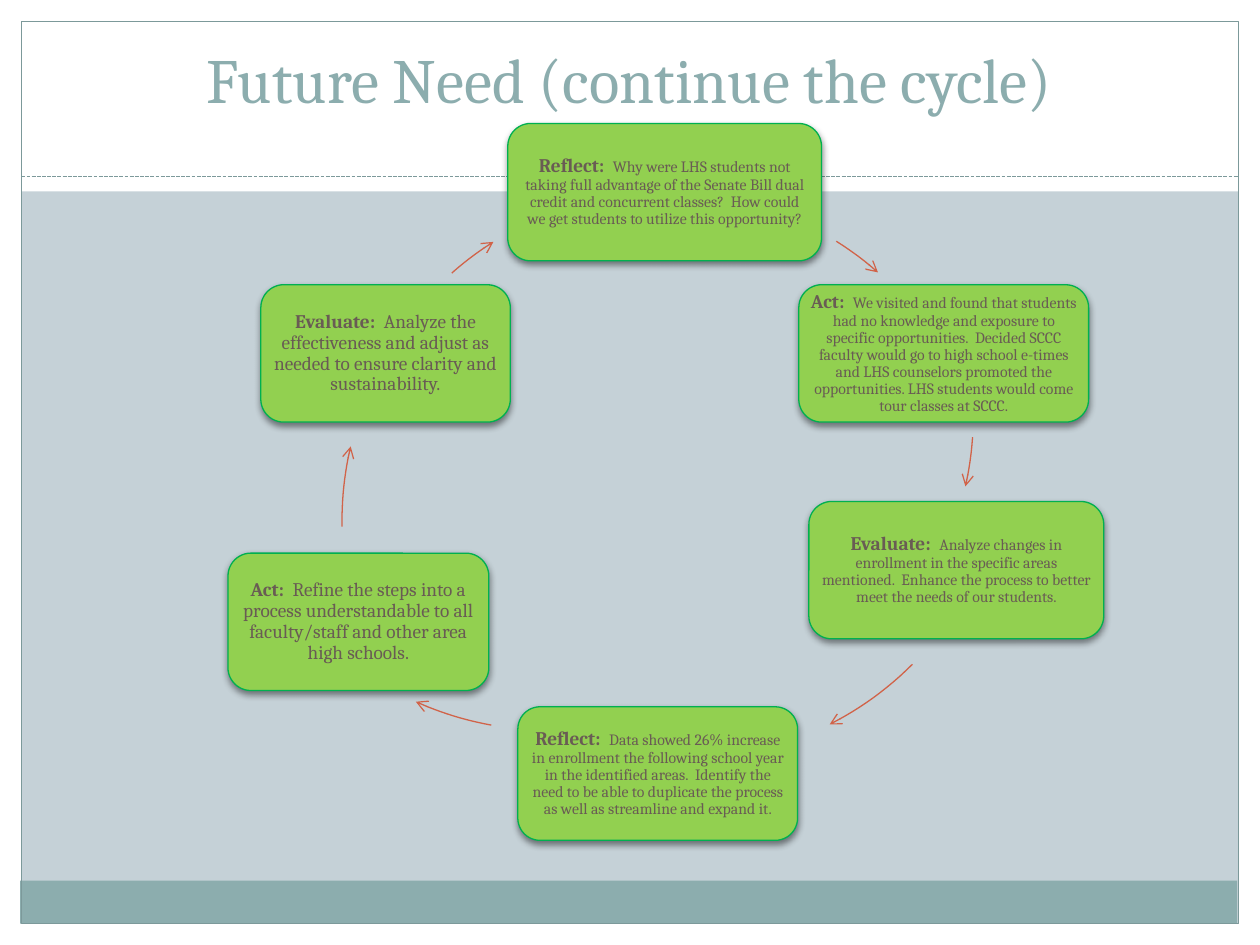
import math

from lxml import etree
from pptx import Presentation
from pptx.dml.color import RGBColor
from pptx.enum import dml, shapes, text
from pptx.oxml.ns import qn
from pptx.util import Inches, Pt

FONT = "Cambria"
WHITE, TEAL, FRAME = "FFFFFF", "8CADAE", "7C999A"
RADIUS = 2.555
ARC_STEPS = 12

MARGINS = [
    (0, 7.33, 10, 0.17),
    (0, 0, 10, 1.52),
    (0, 0, 0.17, 7.5),
    (9.83, 0, 0.17, 7.5),
]

# (left, top, width, height), stage, description, description size
STAGES = [
    ((4.03, 0.98, 2.49, 1.09), "Reflect:  ",
     "Why were LHS students not taking full advantage of the Senate Bill dual credit and "
     "concurrent classes?  How could we get students to utilize this opportunity?", 9),
    ((6.34, 2.26, 2.3, 1.09), "Act:  ",
     "We visited and found that students had no knowledge and exposure to specific "
     "opportunities.  Decided SCCC faculty would go to high school e-times and LHS counselors "
     "promoted the opportunities. LHS students would come tour classes at SCCC.", 9),
    ((6.42, 3.98, 2.34, 1.09), "Evaluate:  ",
     "Analyze changes in enrollment in the specific areas mentioned.  Enhance the process to "
     "better meet the needs of our students.", 9),
    ((4.11, 5.61, 2.22, 1.06), "Reflect:  ",
     "Data showed 26% increase in enrollment the following school year in the identified "
     "areas.  Identify the need to be able to duplicate the process as well as streamline "
     "and expand it.", 9),
    ((1.81, 4.39, 2.07, 1.09), "Act:  ",
     "Refine the steps into a process understandable to all faculty/staff and other area "
     "high schools.", 11),
    ((2.07, 2.26, 1.98, 1.09), "Evaluate:  ",
     "Analyze the effectiveness and adjust as needed to ensure clarity and sustainability.", 11),
]

# circle centre, arc start, arc end
ARROWS = [
    ((5.28, 4.08), (6.64, 1.91), (6.97, 2.16)),
    ((5.17, 3.3), (7.72, 3.47), (7.66, 3.86)),
    ((5.43, 3.47), (7.24, 5.27), (6.58, 5.74)),
    ((4.35, 3.24), (3.9, 5.75), (3.3, 5.57)),
    ((5.27, 4.13), (2.71, 4.18), (2.77, 3.54)),
    ((5.28, 4.08), (3.58, 2.16), (3.91, 1.91)),
]


def rgb(color):
    return RGBColor.from_string(color)


def set_line(shape, color):
    shape.line.color.rgb = rgb(color)
    shape.line.width = Pt(0.75)


def add_panel(slide, box, fill=None, line=None, kind=shapes.MSO_SHAPE.RECTANGLE):
    panel = slide.shapes.add_shape(kind, *map(Inches, box))
    panel.shadow.inherit = False
    if fill:
        panel.fill.solid()
        panel.fill.fore_color.rgb = rgb(fill)
    else:
        panel.fill.background()
    if line:
        set_line(panel, line)
    else:
        panel.line.fill.background()
    return panel


def add_divider(slide):
    divider = slide.shapes.add_connector(
        shapes.MSO_CONNECTOR.STRAIGHT, *map(Inches, (0.17, 1.4, 9.83, 1.4)))
    set_line(divider, FRAME)
    divider.line.dash_style = dml.MSO_LINE.SQUARE_DOT
    etree.SubElement(divider._element.spPr, qn("a:effectLst"))


def add_title(slide, wording):
    frame = slide.shapes.add_textbox(*map(Inches, (0.6, 0.15, 8.79, 0.82))).text_frame
    frame.word_wrap = True
    frame.vertical_anchor = text.MSO_ANCHOR.BOTTOM
    title = frame.paragraphs[0]
    title.text = wording
    title.alignment = text.PP_ALIGN.CENTER
    title.font.name, title.font.size = FONT, Pt(36)
    title.font.color.rgb = rgb(TEAL)


def add_drop_shadow(shape):
    effects = shape._element.spPr.find(qn("a:effectLst"))
    shadow = etree.SubElement(
        effects, qn("a:outerShdw"), blurRad=str(Pt(4)), dist=str(Pt(2)),
        dir="5400000", rotWithShape="0")
    color = etree.SubElement(shadow, qn("a:srgbClr"), val="000000")
    etree.SubElement(color, qn("a:alpha"), val="45000")


def add_stage(slide, box, stage, description, size):
    card = add_panel(slide, box, "92D050", "00B050", shapes.MSO_SHAPE.ROUNDED_RECTANGLE)
    add_drop_shadow(card)
    frame = card.text_frame
    frame.word_wrap = True
    frame.vertical_anchor = text.MSO_ANCHOR.MIDDLE
    frame.margin_left = frame.margin_right = Inches(0.04)
    frame.margin_top = frame.margin_bottom = Inches(0.05)
    paragraph = frame.paragraphs[0]
    paragraph.alignment = text.PP_ALIGN.CENTER
    paragraph.line_spacing = 0.9
    paragraph.font.name = FONT
    paragraph.font.color.rgb = rgb("695C54")
    for wording, points, bold in ((stage, 11, True), (description, size, False)):
        run = paragraph.add_run()
        run.text = wording
        run.font.size, run.font.bold = Pt(points), bold


def add_arc_arrow(slide, center, start, end):
    """Draw an arrow along the shorter arc of the circle around center."""
    cx, cy = center
    first, last = (math.atan2(y - cy, x - cx) for x, y in (start, end))
    sweep = math.remainder(last - first, math.tau)
    angles = [first + sweep * step / ARC_STEPS for step in range(ARC_STEPS + 1)]
    points = [(Inches(cx + RADIUS * math.cos(angle)), Inches(cy + RADIUS * math.sin(angle)))
              for angle in angles]
    builder = slide.shapes.build_freeform(*points[0])
    builder.add_line_segments(points[1:], close=False)
    arrow = builder.convert_to_shape()
    arrow.shadow.inherit = False
    arrow.fill.background()
    set_line(arrow, "D16349")
    etree.SubElement(arrow._element.spPr.find(qn("a:ln")), qn("a:tailEnd"), type="arrow")


def main():
    deck = Presentation()
    deck.slide_width, deck.slide_height = Inches(10), Inches(7.5)
    slide = deck.slides.add_slide(deck.slide_layouts[6])
    slide.background.fill.solid()
    slide.background.fill.fore_color.rgb = rgb("C5D1D7")

    for margin in MARGINS:
        add_panel(slide, margin, WHITE)
    add_panel(slide, (0.16, 6.99, 9.66, 0.34), TEAL)
    add_panel(slide, (0.17, 0.17, 9.66, 7.16), line=FRAME)
    add_divider(slide)
    add_title(slide, "Future Need (continue the cycle)")
    for stage, arrow in zip(STAGES, ARROWS):
        add_stage(slide, *stage)
        add_arc_arrow(slide, *arrow)
    deck.save("out.pptx")


if __name__ == "__main__":
    main()
